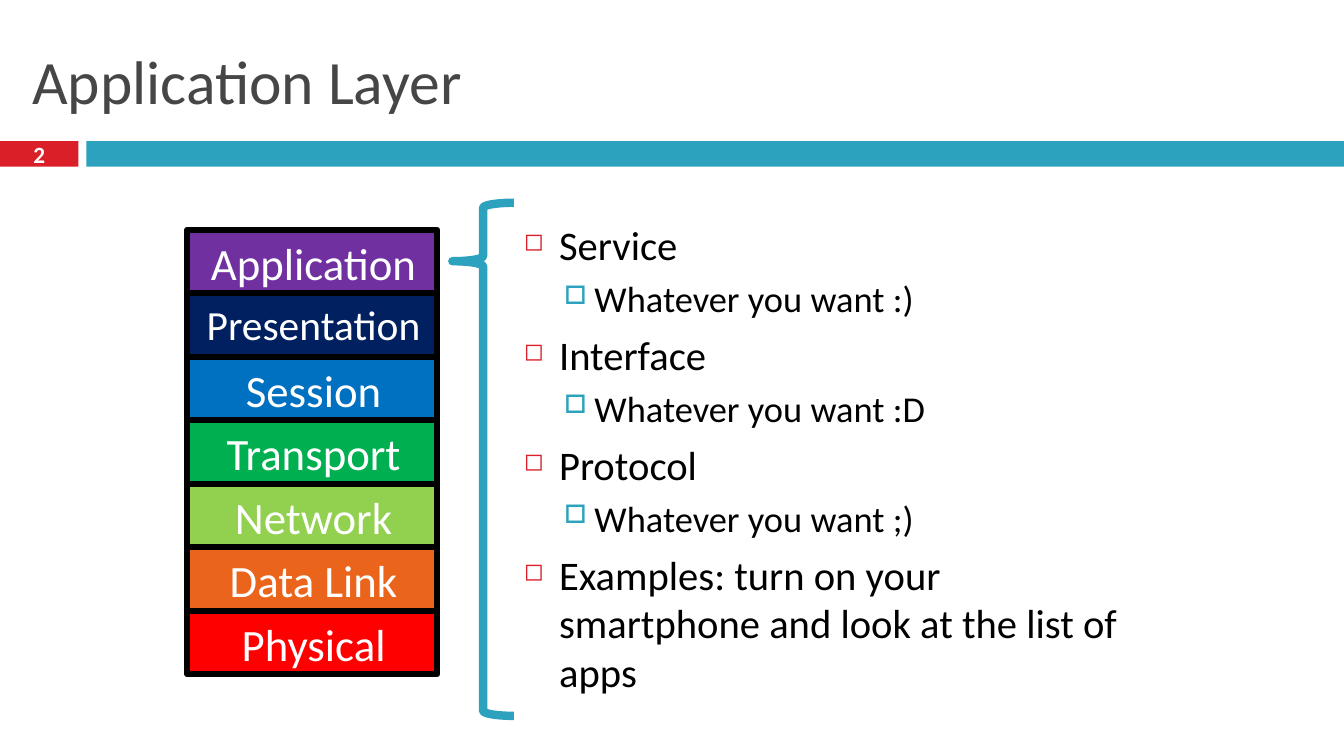
from lxml import etree
from pptx import Presentation
from pptx.dml.color import RGBColor
from pptx.enum.shapes import MSO_SHAPE
from pptx.enum.text import MSO_ANCHOR, MSO_AUTO_SIZE, PP_ALIGN
from pptx.oxml.ns import qn
from pptx.util import Cm, Pt

RECT, BRACE = MSO_SHAPE.RECTANGLE, MSO_SHAPE.LEFT_BRACE
TOP, MIDDLE = MSO_ANCHOR.TOP, MSO_ANCHOR.MIDDLE
LEFT, CENTER = PP_ALIGN.LEFT, PP_ALIGN.CENTER
FONT = "Calibri"

# Content
TITLE = "Application Layer"
PAGE = "2"
LAYERS = [  # name, fill, text size
    ("Application", "purple", 32),
    ("Presentation", "navy", 29.6),
    ("Session", "blue", 32),
    ("Transport", "green", 32),
    ("Network", "lime", 32),
    ("Data Link", "orange", 32),
    ("Physical", "bright_red", 32),
]
POINTS = [  # level, text
    (0, "Service"),
    (1, "Whatever you want :)"),
    (0, "Interface"),
    (1, "Whatever you want :D"),
    (0, "Protocol"),
    (1, "Whatever you want ;)"),
    (0, "Examples: turn on your smartphone and look at the list of apps"),
]
LEVELS = [
    dict(size=29, before=7, margin=0.89, indent=-0.89, char="◻", color="red", pct=60),
    dict(size=26, before=5.5, margin=1.78, indent=-0.76, char="□", color="teal", pct=70),
]
COLORS = {
    "red": "DA1F28", "teal": "2DA2BF", "title": "464646", "black": "000000",
    "white": "FFFFFF", "purple": "7030A0", "navy": "002060", "blue": "0070C0",
    "green": "00B050", "lime": "92D050", "orange": "EB641B", "bright_red": "FF0000",
}

# Layout in cm
SLIDE_W, SLIDE_H = 33.87, 19.05
BAR_TOP, BAR_H, PAGE_W, BAR_LEFT = 3.56, 0.64, 1.98, 2.18
STACK_LEFT, STACK_TOP, STACK_W, LAYER_H = 4.72, 5.79, 6.3, 1.6


def rgb(name):
    return RGBColor.from_string(COLORS[name])


def add_shape(kind, left, top, width, height, fill=None, line=None, line_pt=0):
    s = slide.shapes.add_shape(kind, Cm(left), Cm(top), Cm(width), Cm(height))
    s.shadow.inherit = False
    if fill:
        s.fill.solid()
        s.fill.fore_color.rgb = rgb(fill)
    else:
        s.fill.background()
    if line:
        s.line.color.rgb = rgb(line)
        s.line.width = Pt(line_pt)
    else:
        s.line.fill.background()
    return s


def set_frame(tf, anchor, margins):
    tf.word_wrap = True
    tf.auto_size = MSO_AUTO_SIZE.NONE
    tf.vertical_anchor = anchor
    tf.margin_left, tf.margin_top, tf.margin_right, tf.margin_bottom = map(Cm, margins)


def write(p, text, size, color, align=LEFT, bold=False):
    p.text = text
    p.alignment = align
    font = p.runs[0].font
    font.name, font.size, font.bold = FONT, Pt(size), bold
    font.color.rgb = rgb(color)


def set_bullet(p, level):
    pPr = p._p.get_or_add_pPr()
    pPr.set("marL", str(Cm(level["margin"])))
    pPr.set("indent", str(Cm(level["indent"])))
    clr = etree.SubElement(pPr, qn("a:buClr"))
    etree.SubElement(clr, qn("a:srgbClr"), val=COLORS[level["color"]])
    etree.SubElement(pPr, qn("a:buSzPct"), val=str(level["pct"] * 1000))
    etree.SubElement(pPr, qn("a:buChar"), char=level["char"])


prs = Presentation()
prs.slide_width, prs.slide_height = Cm(SLIDE_W), Cm(SLIDE_H)
slide = prs.slides.add_slide(prs.slide_layouts[5])

# Title
title = slide.shapes.title
title.left, title.top, title.width, title.height = Cm(0.56), Cm(0.64), Cm(32.74), Cm(2.74)
set_frame(title.text_frame, MIDDLE, (0.25, 0.13, 0.25, 0.13))
write(title.text_frame.paragraphs[0], TITLE, 44, "title")

# Header bar with page number
page = add_shape(RECT, 0, BAR_TOP, PAGE_W, BAR_H, "red")
set_frame(page.text_frame, MIDDLE, (0, 0, 0, 0))
write(page.text_frame.paragraphs[0], PAGE, 16.6, "white", CENTER, True)
add_shape(RECT, BAR_LEFT, BAR_TOP, SLIDE_W - BAR_LEFT, BAR_H, "teal")

# Bulleted points
body = slide.shapes.add_textbox(Cm(12.95), Cm(4.45), Cm(16.26), Cm(14.17))
tf = body.text_frame
set_frame(tf, MIDDLE, (0.25, 0.13, 0.25, 0.13))
for i, (depth, text) in enumerate(POINTS):
    p = tf.add_paragraph() if i else tf.paragraphs[0]
    level = LEVELS[depth]
    write(p, text, level["size"], "black")
    p.level = depth
    p.space_before = Pt(level["before"])
    set_bullet(p, level)

# Layer stack
for i, (name, fill, size) in enumerate(LAYERS):
    s = add_shape(RECT, STACK_LEFT, STACK_TOP + i * LAYER_H, STACK_W, LAYER_H,
                  fill, "black", 4.5)
    set_frame(s.text_frame, TOP, (0.15, 0.15, 0.08, 0))
    write(s.text_frame.paragraphs[0], name, size, "white", CENTER)

# Brace from the application layer to the points
brace = add_shape(BRACE, 11.4, 5.11, 1.55, 12.93, line="teal", line_pt=6)
brace.adjustments[0] = 0.083
brace.adjustments[1] = 0.114

prs.save("out.pptx")
